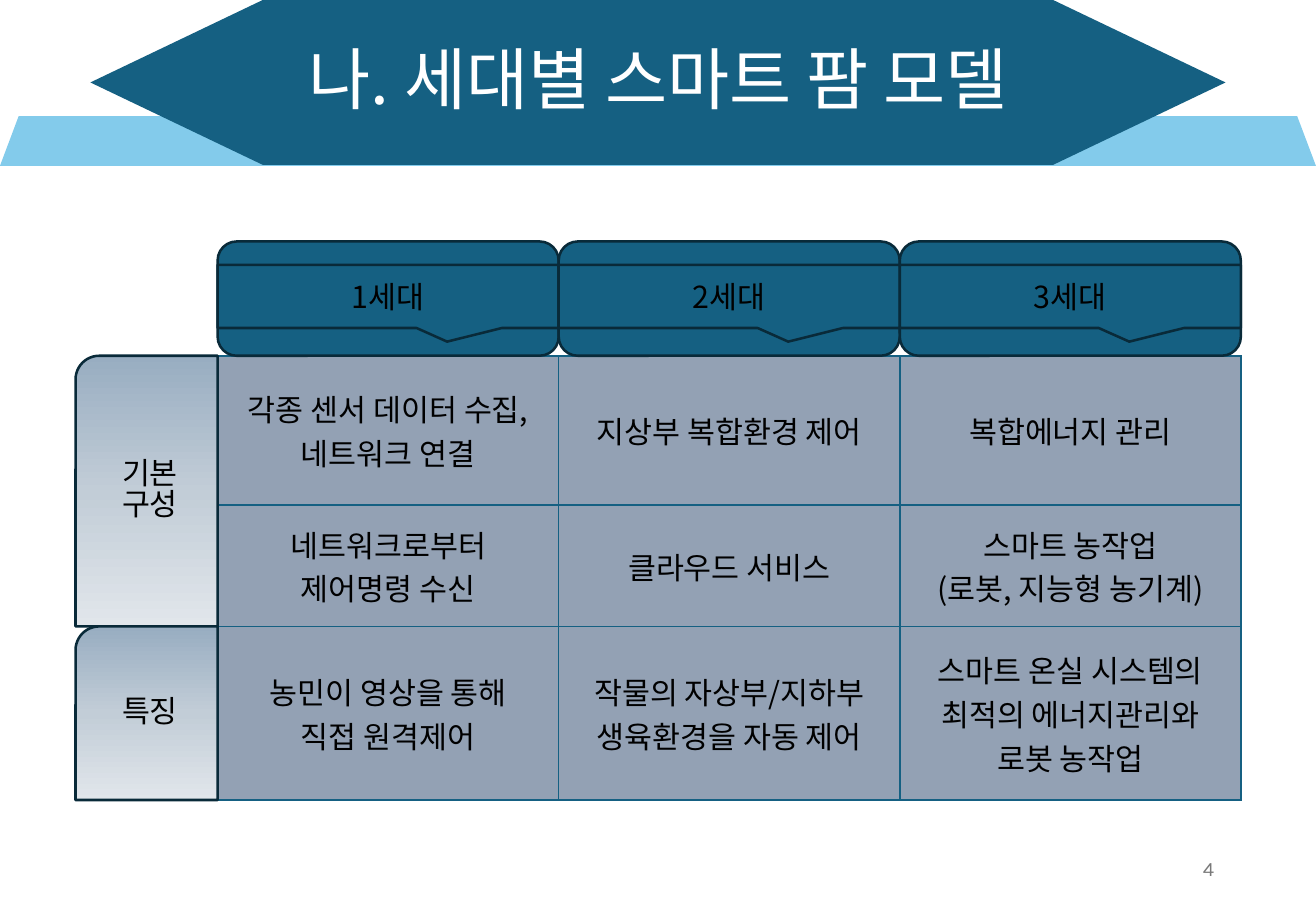
from dataclasses import dataclass
from copy import deepcopy

from lxml.etree import SubElement
from pptx import Presentation
from pptx.dml.color import RGBColor
from pptx.enum.shapes import MSO_SHAPE as Preset
from pptx.enum.text import MSO_ANCHOR as Anchor, PP_ALIGN as Align
from pptx.oxml.ns import qn
from pptx.shapes.autoshape import Shape
from pptx.slide import Slide
from pptx.table import _Cell as Cell
from pptx.text.text import TextFrame
from pptx.util import Cm, Pt

BLACK = RGBColor(0x00, 0x00, 0x00)
WHITE = RGBColor(0xFF, 0xFF, 0xFF)
GREY = RGBColor(0x79, 0x79, 0x79)
TEAL = RGBColor(0x15, 0x60, 0x82)
DARK_TEAL = RGBColor(0x09, 0x2A, 0x39)
SKY = RGBColor(0x83, 0xCB, 0xEB)
CELL_BLUE = RGBColor(0x93, 0xA1, 0xB4)
GRADIENT = (
    (0.0, RGBColor(0x98, 0xAD, 0xC1)),
    (0.5, RGBColor(0xC2, 0xCD, 0xD7)),
    (1.0, RGBColor(0xE1, 0xE6, 0xEB)),
)
KOREAN_FONT = "Noto Sans CJK KR"
NUMBER_FONT = "Karla"

SLIDE_WIDTH, SLIDE_HEIGHT = 27.51, 19.05
TABLE_LEFT, TABLE_TOP = 4.55, 7.44
COLUMN_WIDTH = 7.13
ROW_HEIGHTS = (3.12, 2.54, 3.63)
LABEL_LEFT = 1.58
HEADER_HEIGHT = 2.39
CALLOUT_TOP, CALLOUT_HEIGHT = 5.54, 1.32

GENERATIONS = ("1세대", "2세대", "3세대")
MODELS = (
    ("각종 센서 데이터 수집,\v네트워크 연결", "지상부 복합환경 제어", "복합에너지 관리"),
    ("네트워크로부터\v제어명령 수신", "클라우드 서비스", "스마트 농작업\v(로봇, 지능형 농기계)"),
    (
        "농민이 영상을 통해\v직접 원격제어",
        "작물의 자상부/지하부\v생육환경을 자동 제어",
        "스마트 온실 시스템의\v최적의 에너지관리와\v로봇 농작업",
    ),
)


@dataclass(frozen=True)
class Box:
    left: float
    top: float
    width: float
    height: float

    def lengths(self) -> tuple[Cm, Cm, Cm, Cm]:
        return Cm(self.left), Cm(self.top), Cm(self.width), Cm(self.height)


@dataclass(frozen=True)
class TextStyle:
    size: float = 18
    color: RGBColor = BLACK
    font: str = KOREAN_FONT
    align: Align = Align.CENTER
    spacing: float = 1.0


@dataclass(frozen=True)
class RowLabel:
    text: str
    first_row: int
    row_count: int


BODY = TextStyle()
LABEL = TextStyle(spacing=0.85)
TITLE = TextStyle(size=40, color=WHITE, spacing=0.9)
PAGE_NUMBER = TextStyle(size=12, color=GREY, font=NUMBER_FONT, align=Align.RIGHT)
ROW_LABELS = (RowLabel("기본\v구성", 0, 2), RowLabel("특징", 2, 1))


def write_text(frame: TextFrame, text: str, style: TextStyle) -> None:
    frame.word_wrap = True
    frame.vertical_anchor = Anchor.MIDDLE
    paragraph = frame.paragraphs[0]
    paragraph.text = text
    paragraph.alignment = style.align
    paragraph.line_spacing = style.spacing
    for run in paragraph.runs:
        run.font.size = Pt(style.size)
        run.font.color.rgb = style.color
        run.font.name = style.font
        SubElement(run.font._element, qn("a:ea"), typeface=style.font)


def add_text(slide: Slide, box: Box, text: str, style: TextStyle) -> None:
    write_text(slide.shapes.add_textbox(*box.lengths()).text_frame, text, style)


def add_preset(
    slide: Slide,
    preset: Preset,
    box: Box,
    fill: RGBColor,
    adjustments: tuple[float, ...] = (),
    outlined: bool = True,
) -> Shape:
    shape = slide.shapes.add_shape(preset, *box.lengths())
    shape.shadow.inherit = False
    shape.fill.solid()
    shape.fill.fore_color.rgb = fill
    if outlined:
        shape.line.color.rgb = DARK_TEAL
        shape.line.width = Pt(1.5)
    else:
        shape.line.fill.background()
    for index, value in enumerate(adjustments):
        shape.adjustments[index] = value
    return shape


def fill_gradient(shape: Shape) -> None:
    shape.fill.gradient()
    shape.fill.gradient_angle = 270
    stop_list = shape.element.spPr.find(qn("a:gradFill")).find(qn("a:gsLst"))
    stop_list.insert(1, deepcopy(stop_list[0]))
    for stop, (position, color) in zip(shape.fill.gradient_stops, GRADIENT):
        stop.position = position
        stop.color.rgb = color


def add_borders(cell: Cell) -> None:
    properties = cell._tc.get_or_add_tcPr()
    for index, side in enumerate(("lnL", "lnR", "lnT", "lnB")):
        border = properties.makeelement(qn(f"a:{side}"), {"w": str(Pt(1))})
        fill = SubElement(border, qn("a:solidFill"))
        SubElement(fill, qn("a:srgbClr"), val=str(TEAL))
        properties.insert(index, border)


def add_model_table(slide: Slide) -> None:
    box = Box(TABLE_LEFT, TABLE_TOP, COLUMN_WIDTH * len(GENERATIONS), sum(ROW_HEIGHTS))
    table = slide.shapes.add_table(len(MODELS), len(GENERATIONS), *box.lengths()).table
    table.first_row = False
    table.horz_banding = False
    for column in table.columns:
        column.width = Cm(COLUMN_WIDTH)
    for row, height, texts in zip(table.rows, ROW_HEIGHTS, MODELS):
        row.height = Cm(height)
        for cell, text in zip(row.cells, texts):
            write_text(cell.text_frame, text, BODY)
            cell.vertical_anchor = Anchor.MIDDLE
            cell.fill.solid()
            cell.fill.fore_color.rgb = CELL_BLUE
            add_borders(cell)


def add_generation_header(slide: Slide, column: int, text: str) -> None:
    left = TABLE_LEFT + column * COLUMN_WIDTH
    back = Box(left, TABLE_TOP - HEADER_HEIGHT, COLUMN_WIDTH, HEADER_HEIGHT)
    add_preset(slide, Preset.ROUNDED_RECTANGLE, back, TEAL)
    front = Box(left, CALLOUT_TOP, COLUMN_WIDTH, CALLOUT_HEIGHT)
    callout = add_preset(slide, Preset.RECTANGULAR_CALLOUT, front, TEAL, (0.173, 0.716))
    write_text(callout.text_frame, text, BODY)


def add_row_label(slide: Slide, label: RowLabel) -> None:
    last_row = label.first_row + label.row_count
    top = TABLE_TOP + sum(ROW_HEIGHTS[:label.first_row])
    height = sum(ROW_HEIGHTS[label.first_row:last_row])
    box = Box(LABEL_LEFT, top, TABLE_LEFT - LABEL_LEFT, height)
    shape = add_preset(slide, Preset.ROUND_1_RECTANGLE, box, CELL_BLUE)
    shape.element.spPr.find(qn("a:xfrm")).set("flipH", "1")
    fill_gradient(shape)
    write_text(shape.text_frame, label.text, LABEL)


def main() -> None:
    presentation = Presentation()
    presentation.slide_width = Cm(SLIDE_WIDTH)
    presentation.slide_height = Cm(SLIDE_HEIGHT)
    slide = presentation.slides.add_slide(presentation.slide_layouts[6])

    ribbon = Box(0, 2.43, SLIDE_WIDTH, 1.04)
    add_preset(slide, Preset.TRAPEZOID, ribbon, SKY, (0.376,), outlined=False)
    banner = Box(1.89, 0, 23.73, 3.45)
    add_preset(slide, Preset.HEXAGON, banner, TEAL, (1.045,), outlined=False)
    add_model_table(slide)
    add_text(slide, Box(19.43, 17.65, 6.2, 1.02), "4", PAGE_NUMBER)
    add_text(slide, banner, "나. 세대별 스마트 팜 모델", TITLE)
    for column, generation in enumerate(GENERATIONS):
        add_generation_header(slide, column, generation)
    for label in ROW_LABELS:
        add_row_label(slide, label)

    presentation.save("out.pptx")


if __name__ == "__main__":
    main()
